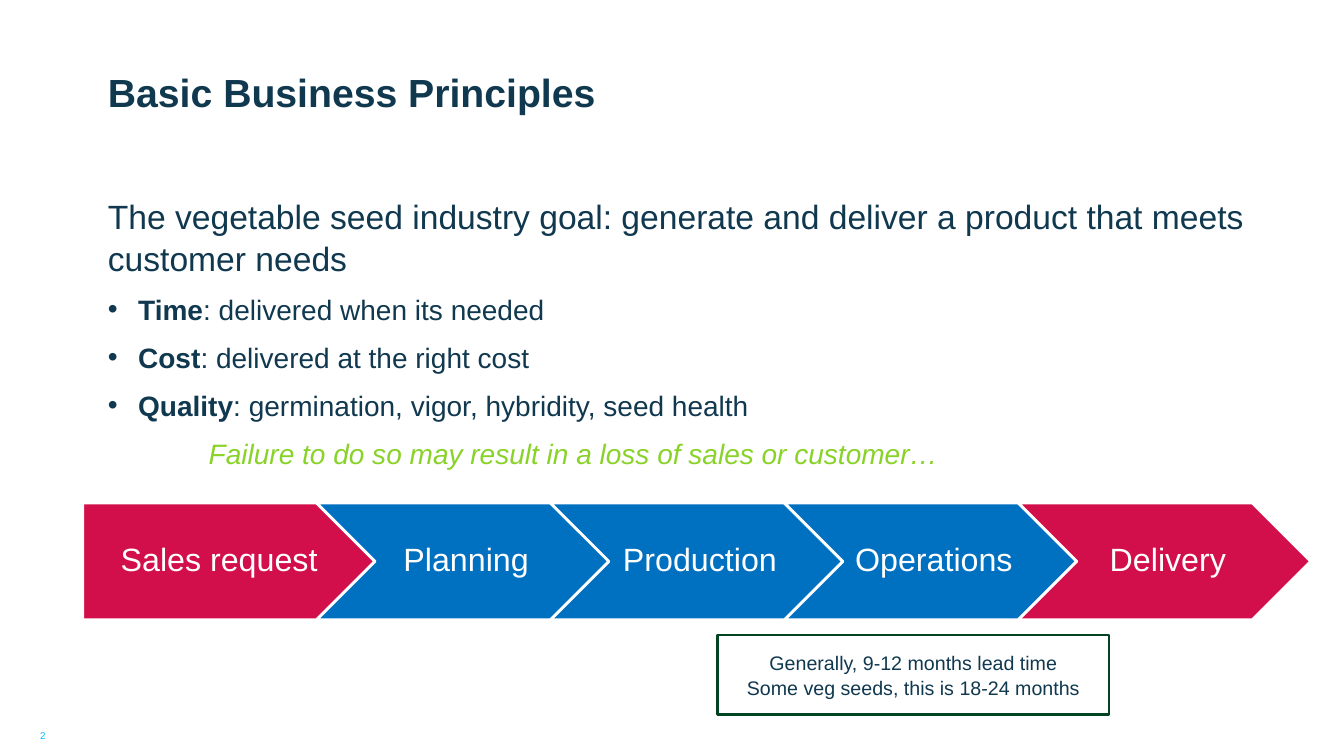
from lxml.etree import SubElement
from pptx import Presentation
from pptx.dml.color import RGBColor
from pptx.enum.shapes import MSO_SHAPE
from pptx.enum.text import MSO_ANCHOR, MSO_AUTO_SIZE, PP_ALIGN
from pptx.oxml.ns import qn
from pptx.util import Pt

PX = 9144  # EMU per px, 100 px to the inch
NAVY = RGBColor(0x10, 0x38, 0x4F)
CRIMSON = RGBColor(0xD3, 0x0F, 0x4B)
BLUE = RGBColor(0x00, 0x70, 0xC0)
GREEN = RGBColor(0x89, 0xD3, 0x29)
DARK_GREEN = RGBColor(0x00, 0x44, 0x22)
CYAN = RGBColor(0x00, 0xBC, 0xFF)
WHITE = RGBColor(0xFF, 0xFF, 0xFF)


def write(paragraph, text, size, color=NAVY, bold=False, italic=False,
          align=PP_ALIGN.LEFT, spacing=1.0, before=0, after=0):
    paragraph.alignment = align
    paragraph.line_spacing = spacing
    paragraph.space_before, paragraph.space_after = Pt(before), Pt(after)
    run = paragraph.add_run()
    run.text = text
    run.font.name, run.font.size = "Arial", Pt(size)
    run.font.bold, run.font.italic = bold, italic
    run.font.color.rgb = color


def set_frame(frame, anchor, left=0, top=0, right=0, bottom=0):
    frame.word_wrap = True
    frame.auto_size = MSO_AUTO_SIZE.NONE
    frame.vertical_anchor = anchor
    frame.margin_left, frame.margin_top = left * PX, top * PX
    frame.margin_right, frame.margin_bottom = right * PX, bottom * PX


prs = Presentation()
prs.slide_width, prs.slide_height = 1333 * PX, 750 * PX
slide = prs.slides.add_slide(prs.slide_layouts[5])
shapes = slide.shapes

# Title
title = shapes.title
title.left, title.top, title.width, title.height = 107 * PX, 20 * PX, 1181 * PX, 94 * PX
set_frame(title.text_frame, MSO_ANCHOR.BOTTOM)
write(title.text_frame.paragraphs[0], "Basic Business Principles", 28, bold=True)

# Goal and its three principles
goal = shapes.add_textbox(107 * PX, 192 * PX, 1181 * PX, 329 * PX).text_frame
set_frame(goal, MSO_ANCHOR.TOP)
write(goal.paragraphs[0],
      "The vegetable seed industry goal: generate and deliver a product that meets customer needs",
      24, spacing=1.05, after=6)

principles = [
    ("Time", ": delivered when its needed"),
    ("Cost", ": delivered at the right cost"),
    ("Quality", ": germination, vigor, hybridity, seed health"),
]
principle_format = dict(size=20, spacing=1.05, before=3, after=6)
for principle, meaning in principles:
    bullet = goal.add_paragraph()
    properties = bullet._p.get_or_add_pPr()
    properties.set("marL", str(30 * PX))
    properties.set("indent", str(-30 * PX))
    SubElement(properties, qn("a:buFont")).set("typeface", "Arial")
    SubElement(properties, qn("a:buChar")).set("char", "•")
    write(bullet, principle, bold=True, **principle_format)
    write(bullet, meaning, **principle_format)

warning = goal.add_paragraph()
warning._p.get_or_add_pPr().set("marL", str(100 * PX))
write(warning, "Failure to do so may result in a loss of sales or customer…",
      color=GREEN, italic=True, **principle_format)

# Process chain: equal steps, each overlapping the one before
steps = [
    ("Sales request", MSO_SHAPE.PENTAGON, CRIMSON, 13),
    ("Planning", MSO_SHAPE.CHEVRON, BLUE, 10),
    ("Production", MSO_SHAPE.CHEVRON, BLUE, 10),
    ("Operations", MSO_SHAPE.CHEVRON, BLUE, 10),
    ("Delivery", MSO_SHAPE.CHEVRON, CRIMSON, 10),
]
chain = shapes.add_group_shape()
for index, (label, outline, fill, inset) in enumerate(steps):
    step = chain.shapes.add_shape(outline, (82 + 232 * index) * PX, 499 * PX,
                                  290 * PX, 116 * PX)
    step.shadow.inherit = False
    step.fill.solid()
    step.fill.fore_color.rgb = fill
    step.line.color.rgb = WHITE
    step.line.width = Pt(2)
    set_frame(step.text_frame, MSO_ANCHOR.MIDDLE, left=inset, top=7, right=3, bottom=7)
    write(step.text_frame.paragraphs[0], label, 23, color=WHITE,
          align=PP_ALIGN.CENTER, spacing=0.9)

# Lead time note
lead_time = shapes.add_shape(MSO_SHAPE.RECTANGLE, 712 * PX, 630 * PX, 388 * PX, 79 * PX)
lead_time.shadow.inherit = False
lead_time.fill.background()
lead_time.line.color.rgb = DARK_GREEN
lead_time.line.width = Pt(2)
note = lead_time.text_frame
set_frame(note, MSO_ANCHOR.MIDDLE, left=10, top=5, right=10, bottom=5)
note_format = dict(size=14, align=PP_ALIGN.CENTER, spacing=1.05)
write(note.paragraphs[0], "Generally, 9-12 months lead time", **note_format)
write(note.add_paragraph(), "Some veg seeds, this is 18-24 months", **note_format)

# Slide number
number = shapes.add_textbox(21 * PX, 724 * PX, 43 * PX, 12 * PX).text_frame
set_frame(number, MSO_ANCHOR.TOP)
write(number.paragraphs[0], "2", 7, color=CYAN, align=PP_ALIGN.CENTER)

prs.save("out.pptx")
